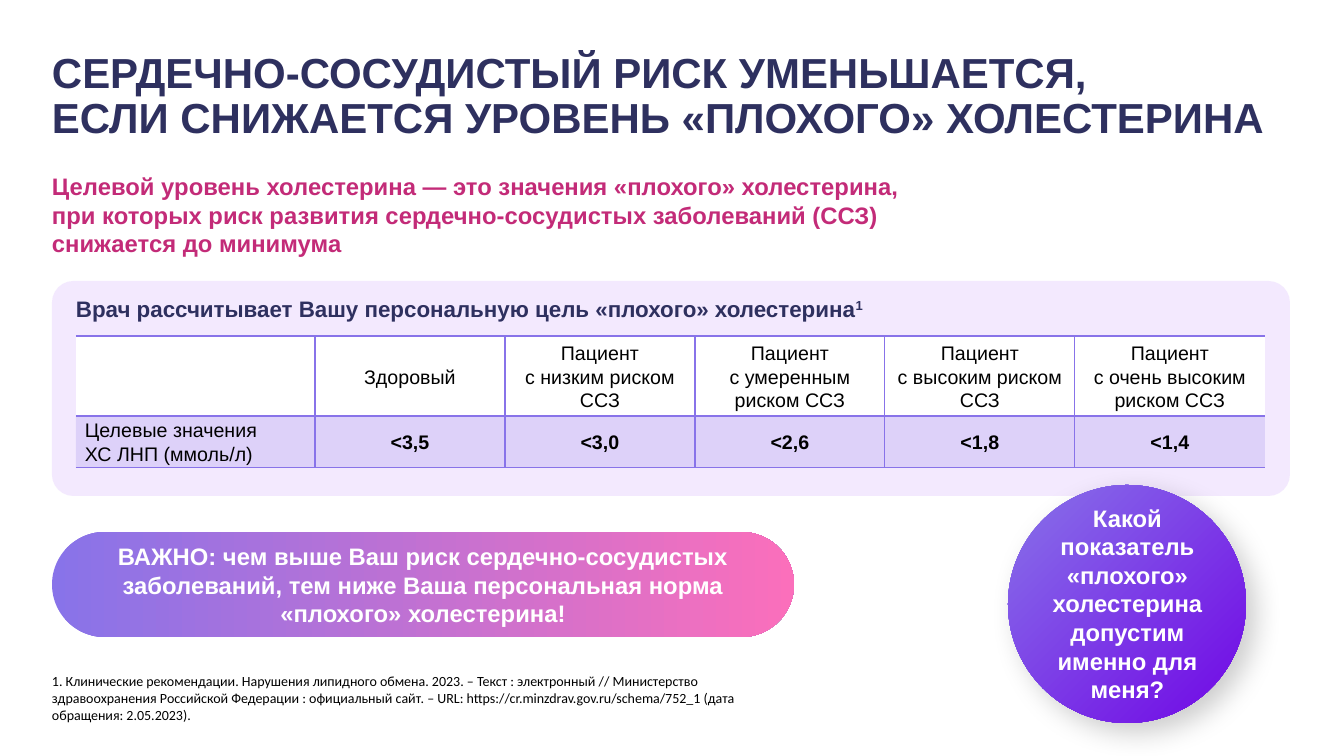
from dataclasses import dataclass
from pptx import Presentation
from pptx.dml.color import RGBColor
from pptx.enum.shapes import MSO_SHAPE as Geo
from pptx.enum.text import MSO_ANCHOR as Anchor, PP_ALIGN as Align
from pptx.oxml import parse_xml
from pptx.oxml.ns import nsdecls, qn
from pptx.util import Emu, Pt

SCALE = 914400 / 100.8


@dataclass(frozen=True)
class Theme:
    navy: str = "2E305F"
    pink: str = "C32B78"
    black: str = "000000"
    white: str = "FFFFFF"
    card: str = "EAD8FE"
    violet: str = "8873E9"
    rose: str = "FB6FBB"
    deep: str = "7006E5"
    font: str = "Arial"
    plain: str = "Calibri"
    title: int = 30
    lead: int = 17
    head: int = 16
    cell: int = 14
    note: int = 10


T = Theme()


def px(num):
    """Turn pixels into EMU."""
    return Emu(round(num * SCALE))


def rgb(code):
    """Turn a hex code into a colour."""
    return RGBColor.from_string(code)


def write(para, text, size, color, bold=True, font=T.font, sup=False):
    """Add text as runs, with line breaks between its lines."""
    for num, line in enumerate(text.split("\n")):
        if num:
            para.add_line_break()
        run = para.add_run()
        run.text = line
        run.font.name, run.font.size, run.font.bold = font, Pt(size), bold
        run.font.color.rgb = rgb(color)
        if sup:
            run._r.get_or_add_rPr().set("baseline", "30000")


def label(slide, box, anchor=Anchor.TOP, align=Align.LEFT):
    """Add a text box without margins and return its paragraph."""
    frame = slide.shapes.add_textbox(*map(px, box)).text_frame
    frame.margin_left = frame.margin_top = 0
    frame.margin_right = frame.margin_bottom = 0
    frame.word_wrap, frame.vertical_anchor = True, anchor
    para = frame.paragraphs[0]
    para.alignment = align
    return para


def panel(slide, geo, box, curve=None):
    """Add a bare shape with no line and no shadow."""
    shape = slide.shapes.add_shape(geo, *map(px, box))
    if curve is not None:
        shape.adjustments[0] = curve
    shape.line.fill.background()
    shape.shadow.inherit = False
    return shape


def blend(shape, start, end, angle):
    """Fill a shape with a gradient of two colours."""
    shape.fill.gradient()
    shape.fill.gradient_angle = angle
    for stop, color in zip(shape.fill.gradient_stops, (start, end)):
        stop.color.rgb = rgb(color)


def tint(fill, host, color, share=100):
    """Fill with a colour at a share of full opacity."""
    fill.solid()
    fill.fore_color.rgb = rgb(color)
    if share < 100:
        node = host.find(".//" + qn("a:srgbClr"))
        node.append(parse_xml(f'<a:alpha {nsdecls("a")} val="{share * 1000}"/>'))


def shade(shape):
    """Cast a soft shadow to the lower right."""
    shape._element.spPr.find(qn("a:effectLst")).append(parse_xml(
        f'<a:outerShdw {nsdecls("a")} blurRad="{Pt(20)}" dist="{Pt(10)}" dir="2700000">'
        f'<a:srgbClr val="{T.black}"><a:alpha val="20000"/></a:srgbClr></a:outerShdw>'))


def edge(cell, first, last):
    """Draw the cell borders, leaving the outer sides of the table open."""
    prop = cell._tc.get_or_add_tcPr()
    for spot, (side, shown) in enumerate(
            (("L", not first), ("R", not last), ("T", True), ("B", True))):
        paint = (f'<a:solidFill><a:srgbClr val="{T.violet}"/></a:solidFill>'
                 if shown else "<a:noFill/>")
        prop.insert(spot, parse_xml(
            f'<a:ln{side} {nsdecls("a")} w="{Pt(1)}">{paint}</a:ln{side}>'))


def grid(slide, box, cols, rows, data):
    """Add the table of target values."""
    table = slide.shapes.add_table(len(rows), len(cols), *map(px, box)).table
    table.first_row = table.horz_banding = False
    for col, wide in zip(table.columns, cols):
        col.width = px(wide)
    for row, high in zip(table.rows, rows):
        row.height = px(high)
    for r, line in enumerate(data):
        for c, text in enumerate(line):
            cell = table.cell(r, c)
            cell.margin_left = cell.margin_right = px(9)
            cell.margin_top, cell.margin_bottom = px(1), 0
            cell.vertical_anchor = Anchor.MIDDLE
            tint(cell.fill, cell._tc.get_or_add_tcPr(),
                 T.violet if r else T.white, 20 if r else 100)
            edge(cell, c == 0, c == len(cols) - 1)
            if text:
                para = cell.text_frame.paragraphs[0]
                para.alignment = Align.CENTER if c else Align.LEFT
                para.line_spacing, para.space_after = 1.07, Pt(8)
                write(para, text, T.cell, T.black, bool(r and c))


def main():
    """Build the slide and save it."""
    deck = Presentation()
    deck.slide_width, deck.slide_height = px(1344), px(756)
    slide = deck.slides.add_slide(deck.slide_layouts[6])

    title = label(slide, (52, 52, 1238, 127))
    title.line_spacing = 0.9
    write(title, "СЕРДЕЧНО-СОСУДИСТЫЙ РИСК УМЕНЬШАЕТСЯ,\n"
          "ЕСЛИ СНИЖАЕТСЯ УРОВЕНЬ «ПЛОХОГО» ХОЛЕСТЕРИНА", T.title, T.navy)
    write(label(slide, (52, 172, 880, 92)),
          "Целевой уровень холестерина — это значения «плохого» холестерина, "
          "при которых риск развития сердечно-сосудистых заболеваний (ССЗ) "
          "снижается до минимума", T.lead, T.pink)
    write(label(slide, (52, 673, 742, 50)),
          "1. Клинические рекомендации. Нарушения липидного обмена. 2023. – "
          "Текст : электронный // Министерство здравоохранения Российской "
          "Федерации : официальный сайт. – URL: "
          "https://cr.minzdrav.gov.ru/schema/752_1 (дата обращения: 2.05.2023).",
          T.note, T.black, False, T.plain)

    card = panel(slide, Geo.ROUNDED_RECTANGLE, (52, 281, 1238, 215), 0.1)
    tint(card.fill, card._element.spPr, T.card, 55)
    head = label(slide, (76, 295, 900, 33))
    write(head, "Врач рассчитывает Вашу персональную цель «плохого» холестерина",
          T.head, T.navy)
    write(head, "1", T.head, T.navy, sup=True)

    pill = panel(slide, Geo.ROUNDED_RECTANGLE, (52, 532, 742, 105), 0.5)
    blend(pill, T.violet, T.rose, 0)
    pill.text_frame.word_wrap = True
    pill.text_frame.vertical_anchor = Anchor.MIDDLE
    para = pill.text_frame.paragraphs[0]
    para.alignment = Align.CENTER
    write(para, "ВАЖНО: чем выше Ваш риск сердечно-сосудистых заболеваний, "
          "тем ниже Ваша персональная норма «плохого» холестерина!",
          T.lead, T.white)

    risks = ("с низким риском ССЗ", "с умеренным риском ССЗ",
             "с высоким риском ССЗ", "с очень высоким риском ССЗ")
    grid(slide, (76, 336, 1189, 131), [239] + [190] * 5, [80, 51], [
        ["", "Здоровый"] + [f"Пациент\n{risk}" for risk in risks],
        ["Целевые значения\nХС ЛНП (ммоль/л)",
         "<3,5", "<3,0", "<2,6", "<1,8", "<1,4"]])

    disc = panel(slide, Geo.OVAL, (1008, 485, 238, 238))
    blend(disc, T.violet, T.deep, 315)
    shade(disc)
    write(label(slide, (1018, 504, 219, 199), Anchor.MIDDLE, Align.CENTER),
          "Какой\nпоказатель «плохого» холестерина допустим\nименно для меня?",
          T.lead, T.white)
    deck.save("out.pptx")


if __name__ == "__main__":
    main()
